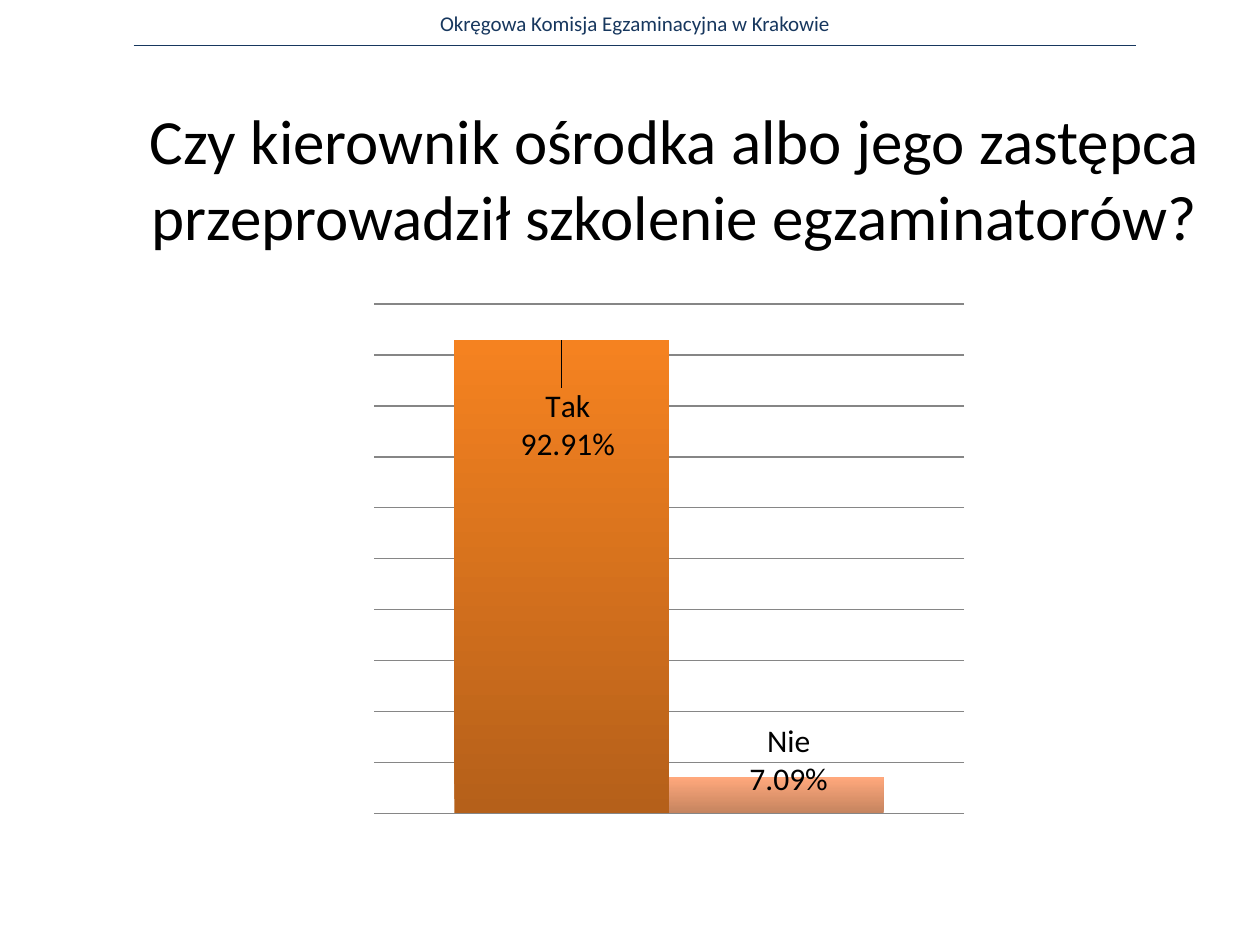
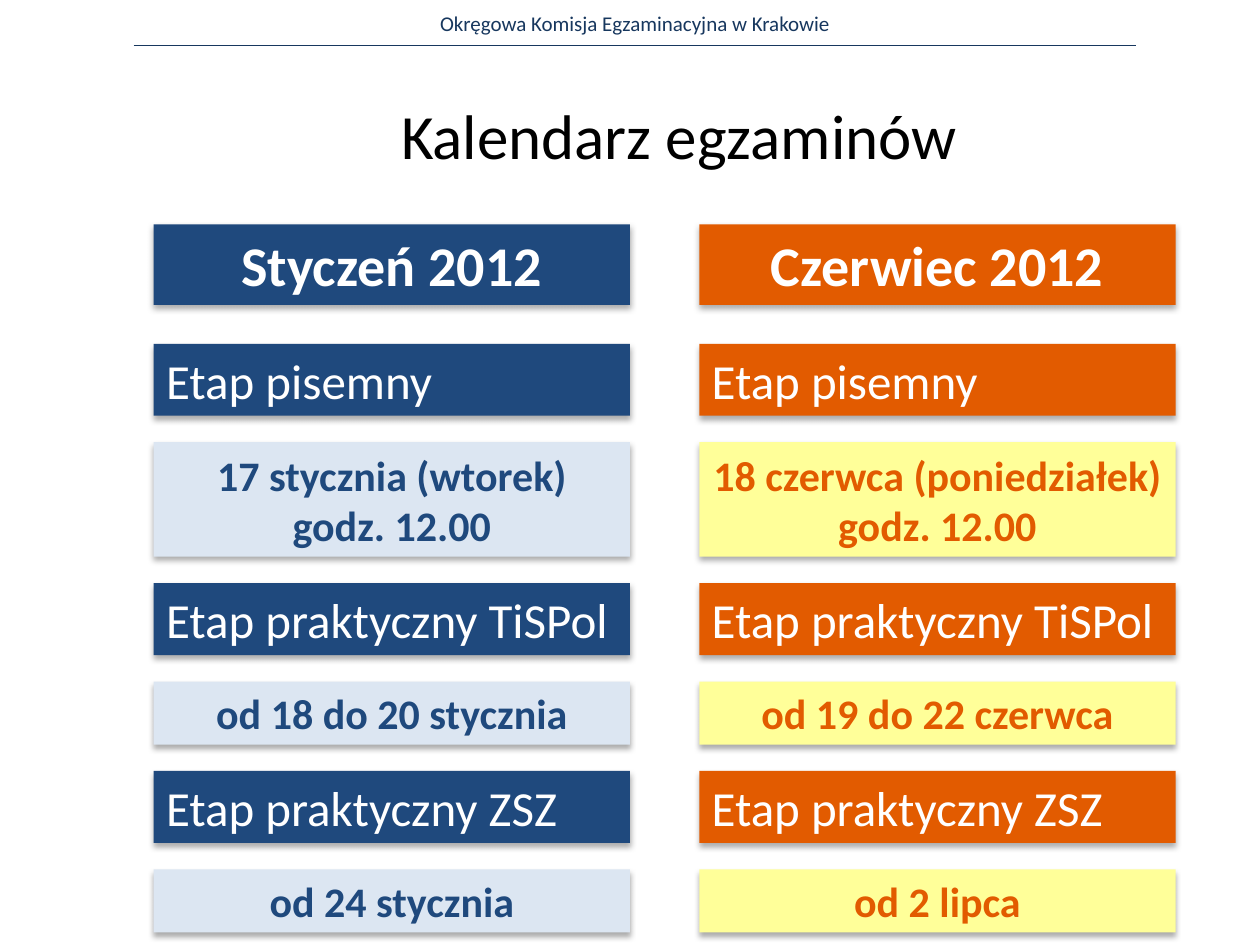
from collections import namedtuple

from lxml import etree
from pptx import Presentation
from pptx.chart.data import CategoryChartData
from pptx.dml.color import RGBColor
from pptx.enum.chart import XL_CHART_TYPE as ChartType
from pptx.enum.shapes import MSO_CONNECTOR as Connector, MSO_SHAPE as Preset
from pptx.enum.text import MSO_ANCHOR as Anchor, MSO_AUTO_SIZE as AutoSize, PP_ALIGN as Align
from pptx.oxml import parse_xml
from pptx.oxml.ns import nsdecls, qn
from pptx.util import Inches, Pt

WIDTH, HEIGHT = Inches(10), Inches(7.5)
COLUMN, ROW = WIDTH / 100, HEIGHT / 100
FONT = "Calibri"
NAVY, BLACK, WHITE, GRID_GREY = "17375E", "000000", "FFFFFF", "868686"

Box = namedtuple("Box", "column row columns rows")
Answer = namedtuple("Answer", "name share top_color bottom_color position shift_x shift_y")
Session = namedtuple("Session", "month strong pale written practical vocational")

HEADER = Box(6.7, 0.4, 87.4, 4)
HEADER_RULE = Box(10.6, 4.8, 79.6, 0)
CALENDAR = Box(12.2, 23.73, 81.1, 75)
SESSION_COLUMNS = 37.8
MONTH_GAP, ROW_GAP = 4.13, 2.8

ANSWERS = [
    Answer("Tak", 0.9291, "F58220", "B5601A", "inEnd", 0.01, 0.08),
    Answer("Nie", 0.0709, "FFA87C", "C5845F", "outEnd", 0.02, 0.05),
]
SESSIONS = [
    Session("Styczeń 2012", "1F497D", "DCE6F2",
            ["17 stycznia (wtorek)", "godz. 12.00"],
            ["od 18 do 20 stycznia"], ["od 24 stycznia"]),
    Session("Czerwiec 2012", "E25B00", "FFFF99",
            ["18 czerwca (poniedziałek)", "godz. 12.00"],
            ["od 19 do 22 czerwca"], ["od 2 lipca"]),
]


def color(value):
    return RGBColor.from_string(value)


def place(box):
    return [round(length) for length in (box.column * COLUMN, box.row * ROW,
                                         box.columns * COLUMN, box.rows * ROW)]


def write(frame, lines, size, ink, align=Align.CENTER, bold=False):
    frame.word_wrap = True
    frame.auto_size = AutoSize.NONE
    frame.vertical_anchor = Anchor.MIDDLE
    for index, line in enumerate(lines):
        paragraph = frame.paragraphs[0] if index == 0 else frame.add_paragraph()
        paragraph.alignment = align
        run = paragraph.add_run()
        run.text = line
        run.font.name, run.font.size, run.font.bold = FONT, Pt(size), bold
        run.font.color.rgb = color(ink)


def add_header(slide):
    office = slide.shapes.add_textbox(*place(HEADER))
    write(office.text_frame, ["Okręgowa Komisja Egzaminacyjna w Krakowie"], 12, NAVY)
    left, top, width, _ = place(HEADER_RULE)
    rule = slide.shapes.add_connector(Connector.STRAIGHT, left, top, left + width, top)
    rule.line.color.rgb = color(NAVY)
    rule.line.width = Pt(0.5)
    etree.SubElement(rule._element.spPr, qn("a:effectLst"))


def add_titled_slide(deck, lines, box, space_below=0.05):
    slide = deck.slides.add_slide(deck.slide_layouts[5])
    add_header(slide)
    title = slide.shapes.title
    title.left, title.top, title.width, title.height = place(box)
    write(title.text_frame, lines, 36, BLACK)
    title.text_frame.margin_bottom = Inches(space_below)
    return slide


def label_answer(series, answer):
    label = parse_xml(
        f'<c:dLbl {nsdecls("c")}><c:idx val="0"/><c:layout><c:manualLayout>'
        f'<c:x val="{answer.shift_x}"/><c:y val="{answer.shift_y}"/>'
        '</c:manualLayout></c:layout><c:numFmt formatCode="0.00%" sourceLinked="0"/>'
        f'<c:dLblPos val="{answer.position}"/><c:showLegendKey val="0"/>'
        '<c:showVal val="1"/><c:showCatName val="0"/><c:showSerName val="1"/>'
        '<c:showPercent val="0"/><c:showBubbleSize val="0"/>'
        '<c:separator>\n</c:separator></c:dLbl>')
    labels = series.data_labels
    labels.show_value = True
    labels.number_format, labels.number_format_is_linked = "0.00%", False
    labels._element.insert(0, label)


def add_answer_chart(slide, box):
    answers = CategoryChartData(number_format="0.00%")
    answers.categories = ["1"]
    for answer in ANSWERS:
        answers.add_series(answer.name, [answer.share])
    chart = slide.shapes.add_chart(ChartType.COLUMN_CLUSTERED, *place(box), answers).chart
    chart.has_legend = chart.has_title = False
    chart.font.name, chart.font.size = FONT, Pt(18)
    chart.font.color.rgb = color(BLACK)
    chart.category_axis.visible = False
    scale = chart.value_axis
    scale.visible = False
    scale.minimum_scale, scale.maximum_scale, scale.major_unit = 0, 1, 0.1
    scale.tick_labels.number_format = "0.00%"
    scale.tick_labels.number_format_is_linked = False
    scale.has_major_gridlines = True
    scale.major_gridlines.format.line.color.rgb = color(GRID_GREY)
    scale.major_gridlines.format.line.width = Pt(0.75)
    plot = chart.plots[0]
    plot.gap_width, plot.overlap, plot.vary_by_categories = 75, 0, False
    for series, answer in zip(plot.series, ANSWERS):
        fill = series.format.fill
        fill.gradient()
        fill.gradient_angle = 90
        for stop, shade in zip(fill.gradient_stops, (answer.bottom_color, answer.top_color)):
            stop.color.rgb = color(shade)
        label_answer(series, answer)


def add_band(slide, box, lines, fill, size, ink, align=Align.CENTER, bold=True):
    band = slide.shapes.add_shape(Preset.RECTANGLE, *place(box))
    band.fill.solid()
    band.fill.fore_color.rgb = color(fill)
    band.line.fill.background()
    band.shadow.inherit = False
    band._element.spPr.find(qn("a:effectLst")).append(parse_xml(
        f'<a:outerShdw {nsdecls("a")} blurRad="{Pt(3.5)}" dist="{Pt(2.2)}" dir="5400000" '
        f'rotWithShape="0"><a:srgbClr val="{BLACK}"><a:alpha val="32000"/></a:srgbClr>'
        '</a:outerShdw>'))
    write(band.text_frame, lines, size, ink, align, bold)


def add_session(slide, box, session):
    def band_box(row, rows):
        return Box(box.column, row, box.columns, rows)

    row = box.row
    add_band(slide, band_box(row, 8.53), [session.month], session.strong, 32, WHITE)
    row += 8.53 + MONTH_GAP
    stages = [
        ("Etap pisemny", session.written, 12.13),
        ("Etap praktyczny TiSPol", session.practical, 6.67),
        ("Etap praktyczny ZSZ", session.vocational, 6.67),
    ]
    for stage, dates, date_rows in stages:
        add_band(slide, band_box(row, 7.6), [stage], session.strong, 28, WHITE,
                 Align.LEFT, False)
        row += 7.6 + ROW_GAP
        add_band(slide, band_box(row, date_rows), dates, session.pale, 24, session.strong)
        row += date_rows + ROW_GAP


def add_calendar(slide, box):
    step = (box.columns - SESSION_COLUMNS) / (len(SESSIONS) - 1)
    for index, session in enumerate(SESSIONS):
        add_session(slide, Box(box.column + index * step, box.row, SESSION_COLUMNS, box.rows),
                    session)


def main():
    deck = Presentation()
    deck.slide_width, deck.slide_height = WIDTH, HEIGHT
    training = add_titled_slide(
        deck, ["Czy kierownik ośrodka albo jego zastępca ",
               "przeprowadził szkolenie egzaminatorów? "],
        Box(9.8, 14.4, 88.6, 16.67), space_below=0.65)
    add_answer_chart(training, Box(28.7, 31.07, 48.8, 56.13))
    calendar = add_titled_slide(deck, ["Kalendarz egzaminów"], Box(11.4, 5.87, 85, 16.67))
    add_calendar(calendar, CALENDAR)
    deck.save("out.pptx")


if __name__ == "__main__":
    main()
